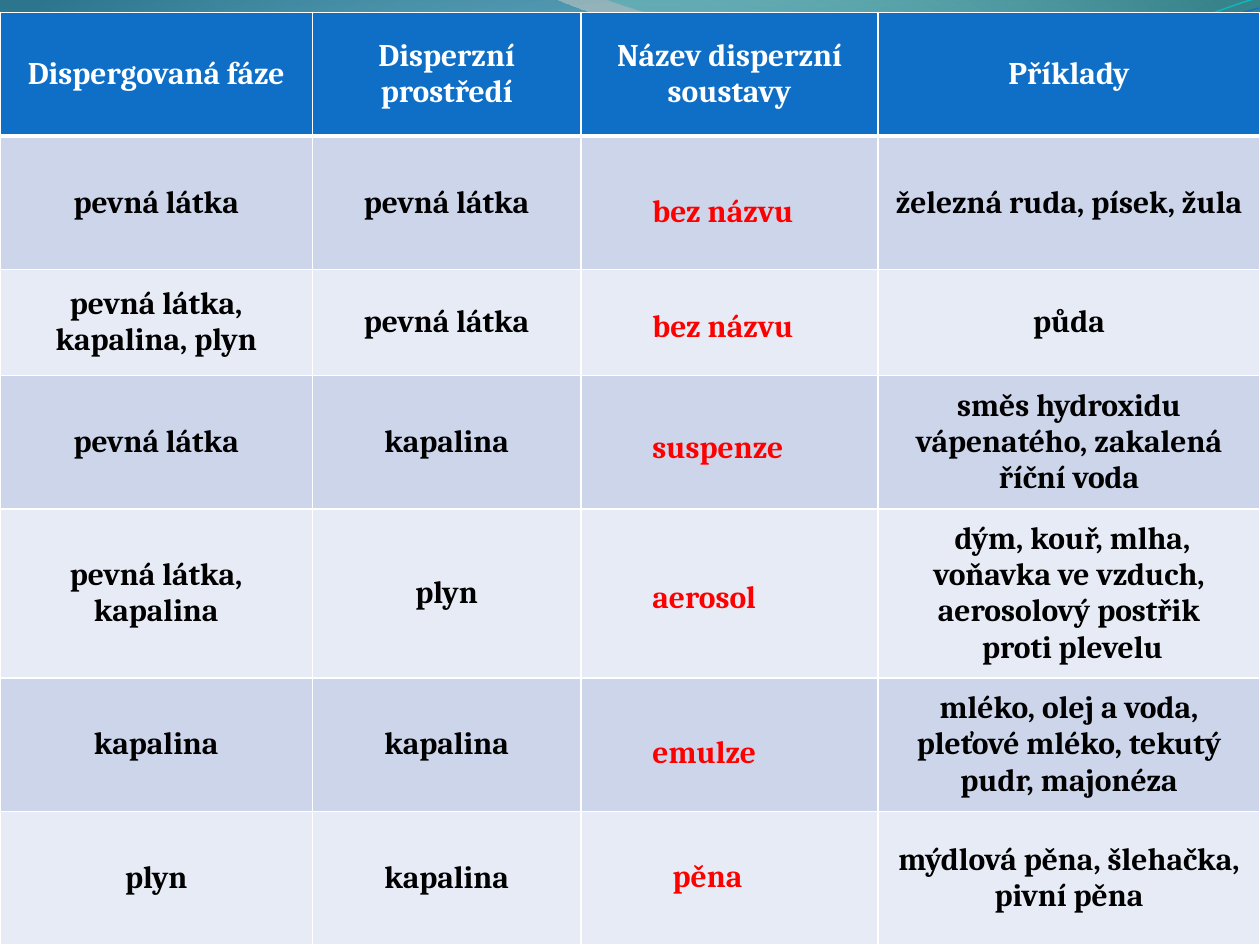
"""Build a slide with a table of disperse systems under a wavy top band."""
from lxml import etree
from pptx import Presentation
from pptx.dml.color import RGBColor
from pptx.enum.text import MSO_ANCHOR, MSO_AUTO_SIZE, PP_ALIGN
from pptx.oxml import parse_xml
from pptx.oxml.ns import nsdecls, qn
from pptx.util import Inches, Pt

MIDDLE = MSO_ANCHOR.MIDDLE
CENTER = PP_ALIGN.CENTER
LEFT = PP_ALIGN.LEFT
FIT_SHAPE = MSO_AUTO_SIZE.SHAPE_TO_FIT_TEXT
COLORS = {
    "header": "0F6FC6", "odd": "CCD5EA", "even": "E7EBF5",
    "white": "FFFFFF", "black": "000000", "name": "FF0000",
    "light": "DEFBFF", "pale": "DDFAFF", "slate": "52767C",
    "blue": "0074A1", "cyan": "00C6CF", "teal": "00A1A9", "sea": "008BBF",
    "aqua": "0AB8BF",
}
FONT = {"name": "Cambria", "size": Pt(18), "bold": True}
LINEAR = '<a:lin ang="5400000" scaled="1"/>'
RADIAL = ('<a:path path="circle"><a:fillToRect l="10000" t="110000" '
          'r="10000" b="100000"/></a:path>')

COLUMNS = [2.48, 2.13, 2.36, 3.03]
ROWS = [0.98, 1.06, 0.84, 1.06, 1.34, 1.06, 1.06]
TABLE_TOP = 0.1
CELLS = [
    ["Dispergovaná fáze", "Disperzní prostředí", "Název disperzní soustavy", "Příklady"],
    ["pevná látka", "pevná látka", "", "železná ruda, písek, žula"],
    ["pevná látka, kapalina, plyn", "pevná látka", "", "půda"],
    ["pevná látka", "kapalina", "", "směs hydroxidu vápenatého, zakalená říční voda"],
    ["pevná látka, kapalina", "plyn", "",
     " dým, kouř, mlha, voňavka ve vzduch, aerosolový postřik\n proti plevelu"],
    ["kapalina", "kapalina", "", "mléko, olej a voda, pleťové mléko, tekutý pudr, majonéza"],
    ["plyn", "kapalina", "", "mýdlová pěna, šlehačka, pivní pěna"],
]
SYSTEM_NAMES = [
    ("bez názvu", 5.08, 1.47, 1.57), ("bez názvu", 5.08, 2.38, 1.57),
    ("suspenze", 5.08, 3.34, 1.44), ("aerosol", 5.08, 4.53, 1.33),
    ("emulze", 5.08, 5.76, 1.32), ("pěna", 5.24, 6.74, 0.94),
]
WAVES = [
    {"start": (0, 0), "fill": [(0, "blue", 45), (100, "cyan", 55)], "parts": [
        [(4.4, -0.01)], [(4.76, 0.17), (6.64, 0.63), (7.58, 0.63)],
        [(8.53, 0.63), (9.58, 0.26), (10, 0.09)], [(10.01, 0.36)],
        [(9.83, 0.44), (8.7, 0.76), (7.46, 0.75)],
        [(6.22, 0.75), (3.82, 0.28), (2.57, 0.34)],
        [(1.29, 0.36), (0.46, 0.83), (-0.01, 1.13)]]},
    {"start": (4.79, -0.01), "fill": [(0, "teal", 30), (80, "sea", 45)], "parts": [
        [(5.09, 0.11), (6.82, 0.62), (7.69, 0.65)],
        [(8.56, 0.69), (9.61, 0.32), (10, 0.21)], [(10, 0)]]},
    {"start": (-0.02, 0.87), "line": ("aqua", 0.85), "parts": [
        [(0.47, 0.72), (1.58, 0.41), (2.77, 0.42)],
        [(3.96, 0.42), (5.91, 0.93), (7.12, 0.9)],
        [(8.32, 0.87), (9.4, 0.36), (10, 0.22)]]},
    {"start": (-0.02, 0.8), "line": ("header", 0.75), "parts": [
        [(0.46, 0.75), (1.64, 0.45), (2.83, 0.46)],
        [(4.03, 0.46), (5.96, 0.89), (7.16, 0.85)],
        [(8.35, 0.83), (9.42, 0.42), (10.01, 0.3)]]},
]
LINE_ROTATION = 357.3


def apply_gradient(properties, stops, direction):
    marks = "".join(
        f'<a:gs pos="{position * 1000}"><a:srgbClr val="{COLORS[color]}">'
        f'<a:alpha val="{alpha * 1000}"/></a:srgbClr></a:gs>'
        for position, color, alpha in stops)
    gradient = parse_xml(f'<a:gradFill {nsdecls("a")} rotWithShape="1">'
                         f'<a:gsLst>{marks}</a:gsLst>{direction}</a:gradFill>')
    properties.replace(properties.find(qn("a:solidFill")), gradient)


def format_text(text_frame, color, alignment):
    for paragraph in text_frame.paragraphs:
        paragraph.alignment = alignment
        for attribute, value in FONT.items():
            setattr(paragraph.font, attribute, value)
        paragraph.font.color.rgb = RGBColor.from_string(COLORS[color])


presentation = Presentation()
presentation.slide_width = Inches(10)
presentation.slide_height = Inches(7.5)
unit = presentation.slide_width // 10
slide = presentation.slides.add_slide(presentation.slide_layouts[6])

background = slide.background.fill
background.solid()
background.fore_color.rgb = RGBColor.from_string(COLORS["slate"])
apply_gradient(next(slide.element.iter(qn("p:bgPr"))),
               [(0, "light", 100), (25, "pale", 100), (100, "slate", 100)], RADIAL)

for wave in WAVES:
    points = [(round(x * 100), round(y * 100))
              for part in [[wave["start"]], *wave["parts"]] for x, y in part]
    builder = slide.shapes.build_freeform(*points[0], scale=unit / 100)
    builder.add_line_segments(points[1:], close="fill" in wave)
    shape = builder.convert_to_shape()
    segments = iter(list(shape.element.iter(qn("a:lnTo"))))
    for part in wave["parts"]:
        pieces = [next(segments) for point in part]
        if len(pieces) == 3:
            curve = etree.Element(qn("a:cubicBezTo"))
            pieces[0].addprevious(curve)
            for piece in pieces:
                curve.append(piece[0])
                piece.getparent().remove(piece)
    shape.shadow.inherit = False
    if "fill" in wave:
        shape.fill.solid()
        apply_gradient(shape.element.spPr, wave["fill"], LINEAR)
        shape.line.fill.background()
    else:
        color, weight = wave["line"]
        shape.rotation = LINE_ROTATION
        shape.fill.background()
        shape.line.color.rgb = RGBColor.from_string(COLORS[color])
        shape.line.width = Pt(weight)

table = slide.shapes.add_table(
    len(ROWS), len(COLUMNS), 0, int(TABLE_TOP * unit),
    int(sum(COLUMNS) * unit), int(sum(ROWS) * unit)).table
for column, width in zip(table.columns, COLUMNS):
    column.width = int(width * unit)
for row_index, (height, texts) in enumerate(zip(ROWS, CELLS)):
    table.rows[row_index].height = int(height * unit)
    fill = "header" if row_index == 0 else "odd" if row_index % 2 else "even"
    for column_index, text in enumerate(texts):
        cell = table.cell(row_index, column_index)
        cell.text = text
        cell.vertical_anchor = MIDDLE
        format_text(cell.text_frame, "black" if row_index else "white", CENTER)
        for side in ("L", "R", "T", "B"):
            heavy = (row_index, side) in ((0, "B"), (1, "T"))
            border = etree.SubElement(cell._tc.get_or_add_tcPr(), qn(f"a:ln{side}"),
                                      w=str(Pt(3 if heavy else 1)))
            solid = etree.SubElement(border, qn("a:solidFill"))
            etree.SubElement(solid, qn("a:srgbClr"), val=COLORS["white"])
        cell.fill.solid()
        cell.fill.fore_color.rgb = RGBColor.from_string(COLORS[fill])

for name, left, top, width in SYSTEM_NAMES:
    box = slide.shapes.add_textbox(*(int(length * unit) for length in (left, top, width, 0.4)))
    text_frame = box.text_frame
    text_frame.word_wrap = True
    text_frame.auto_size = FIT_SHAPE
    text_frame.vertical_anchor = MIDDLE
    text_frame.text = name
    format_text(text_frame, "name", LEFT)

presentation.save("out.pptx")
